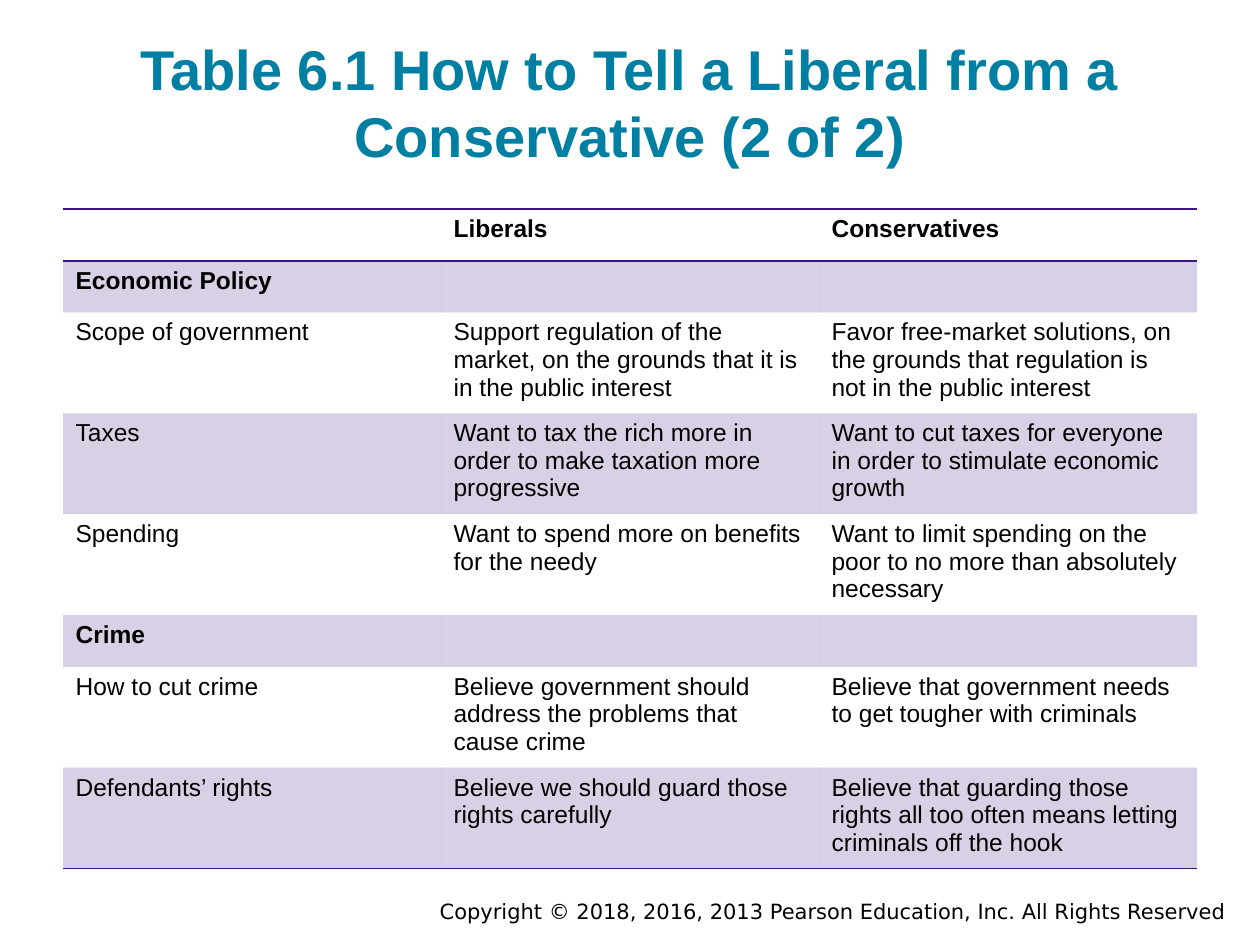
from pptx import Presentation
from pptx.dml.color import RGBColor
from pptx.enum.text import MSO_ANCHOR, MSO_AUTO_SIZE, PP_ALIGN
from pptx.oxml import parse_xml
from pptx.oxml.ns import nsdecls, qn
from pptx.util import Inches, Pt
from lxml.etree import SubElement

PURPLE = "3C1581"
PLAIN_STYLE = "{2D5ABB26-0587-4C30-8999-92F81FD0307C}"
ROWS = [
    ("", "Liberals", "Conservatives"),
    ("Economic Policy", "", ""),
    ("Scope of government",
     "Support regulation of the market, on the grounds that it is in the public interest",
     "Favor free-market solutions, on the grounds that regulation is not in the public interest"),
    ("Taxes",
     "Want to tax the rich more in order to make taxation more progressive",
     "Want to cut taxes for everyone in order to stimulate economic growth"),
    ("Spending",
     "Want to spend more on benefits for the needy",
     "Want to limit spending on the poor to no more than absolutely necessary"),
    ("Crime", "", ""),
    ("How to cut crime",
     "Believe government should address the problems that cause crime",
     "Believe that government needs to get tougher with criminals"),
    ("Defendants’ rights",
     "Believe we should guard those rights carefully",
     "Believe that guarding those rights all too often means letting criminals off the hook"),
]


def color(value):
    """Turn a hex string into a colour."""
    return RGBColor.from_string(value)


def write(frame, text, size=14, font="Arial", fill="000000", bold=False, align=PP_ALIGN.LEFT):
    """Put one formatted paragraph into a text frame."""
    para = frame.paragraphs[0]
    para.alignment = align
    span = para.add_run()
    span.text = text
    span.font.size = Pt(size)
    span.font.name = font
    span.font.bold = bold
    span.font.color.rgb = color(fill)


def place(shape, box):
    """Move a shape to a box given in inches."""
    shape.left, shape.top, shape.width, shape.height = map(Inches, box)


def add_title(page, box, text):
    """Fill the title placeholder."""
    title = page.shapes.title
    place(title, box)
    frame = title.text_frame
    frame.word_wrap = True
    frame.auto_size = MSO_AUTO_SIZE.NONE
    frame.vertical_anchor = MSO_ANCHOR.BOTTOM
    frame.margin_left = frame.margin_right = Inches(0.1)
    frame.margin_top = frame.margin_bottom = Inches(0.1)
    write(frame, text, size=32, fill="007FA3", bold=True, align=PP_ALIGN.CENTER)


def shade(cell, value, percent):
    """Give a cell a transparent fill."""
    cell.fill.solid()
    cell.fill.fore_color.rgb = color(value)
    tint = cell._tc.tcPr.find(".//" + qn("a:srgbClr"))
    SubElement(tint, qn("a:alpha")).set("val", str(percent * 1000))


def rule(cell, sides):
    """Draw one-point borders on the named sides of a cell."""
    for position, side in enumerate(sides):
        line = parse_xml(
            f'<a:ln{side} {nsdecls("a")} w="{Pt(1)}"><a:solidFill>'
            f'<a:srgbClr val="{PURPLE}"/></a:solidFill></a:ln{side}>')
        cell._tc.get_or_add_tcPr().insert(position, line)


def add_comparison(page, box, rows):
    """Add the banded table of views."""
    table = page.shapes.add_table(len(rows), len(rows[0]), *map(Inches, box)).table
    table.first_row = table.horz_banding = False
    table._tbl.tblPr.find(qn("a:tableStyleId")).text = PLAIN_STYLE
    borders = {0: "TB", len(rows) - 1: "B"}
    for row_index, texts in enumerate(rows):
        heading = "" in texts
        for column_index, text in enumerate(texts):
            cell = table.cell(row_index, column_index)
            cell.margin_left = cell.margin_right = Inches(0.1)
            cell.margin_top = cell.margin_bottom = Inches(0.05)
            if text:
                write(cell.text_frame, text, bold=heading)
            if row_index % 2:
                shade(cell, PURPLE, 20)
            else:
                cell.fill.background()
            rule(cell, borders.get(row_index, ""))


def add_copyright(page, box, text):
    """Add the copyright line."""
    frame = page.shapes.add_textbox(*map(Inches, box)).text_frame
    frame.word_wrap = True
    write(frame, text, size=12, font="DejaVu Sans", align=PP_ALIGN.RIGHT)


def main():
    """Build and save the slide."""
    deck = Presentation()
    deck.slide_width, deck.slide_height = Inches(10), Inches(7.5)
    page = deck.slides.add_slide(deck.slide_layouts[5])
    add_copyright(page, (2, 7.08, 7.83, 0.3),
                  "Copyright © 2018, 2016, 2013 Pearson Education, Inc. All Rights Reserved")
    add_title(page, (0.5, 0.3, 9, 1.14),
              "Table 6.1 How to Tell a Liberal from a Conservative (2 of 2)")
    add_comparison(page, (0.5, 1.66, 9, 0.41 * len(ROWS)), ROWS)
    deck.save("out.pptx")


if __name__ == "__main__":
    main()
